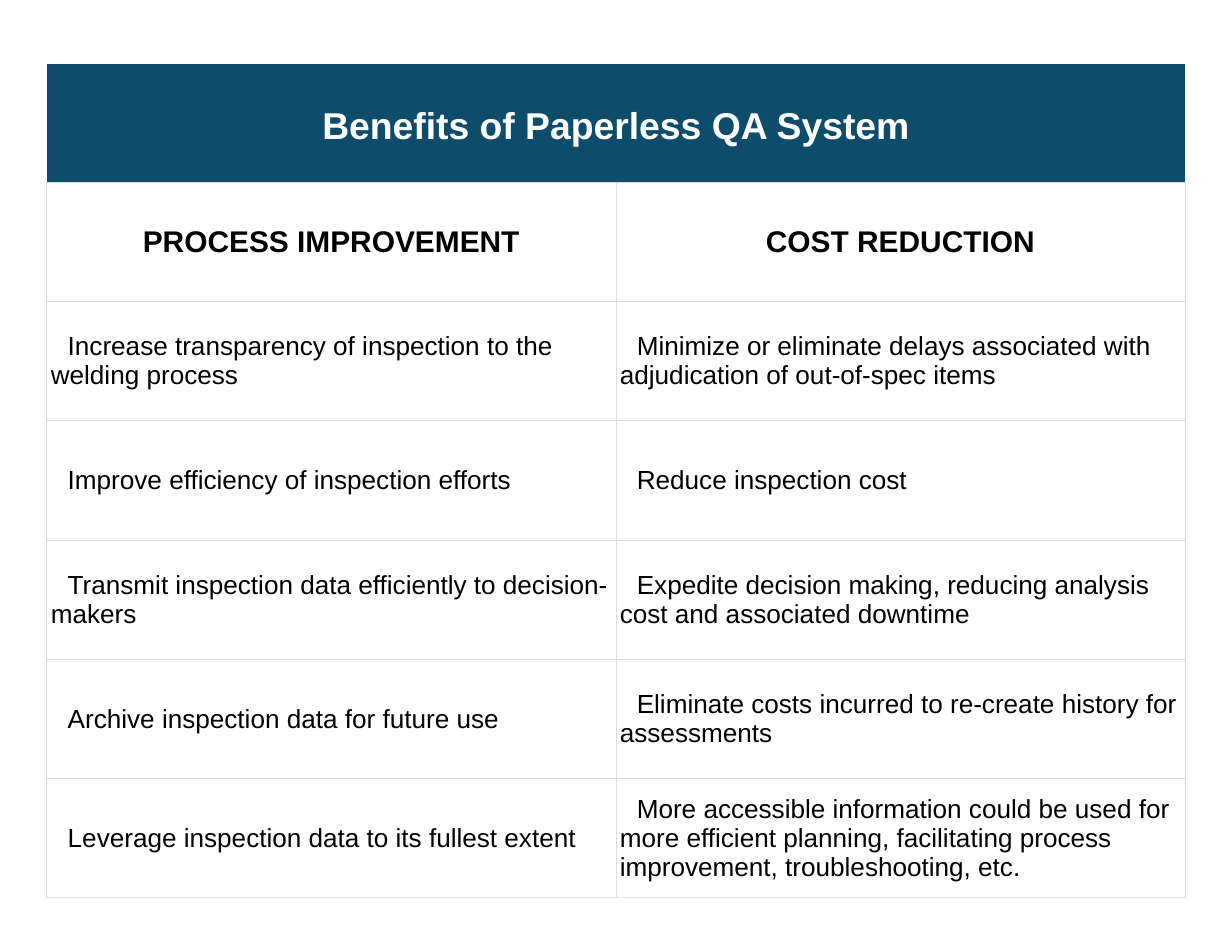
from dataclasses import dataclass

from lxml import etree
from pptx import Presentation
from pptx.dml.color import RGBColor
from pptx.enum import text
from pptx.oxml import ns
from pptx.util import Cm, Pt

TITLE = "Benefits of Paperless QA System"
HEADINGS = ("PROCESS IMPROVEMENT", "COST REDUCTION")
BENEFITS = [
    ("Increase transparency of inspection to the welding process",
     "Minimize or eliminate delays associated with adjudication of out-of-spec items"),
    ("Improve efficiency of inspection efforts",
     "Reduce inspection cost"),
    ("Transmit inspection data efficiently to decision-makers",
     "Expedite decision making, reducing analysis cost and associated downtime"),
    ("Archive inspection data for future use",
     "Eliminate costs incurred to re-create history for assessments"),
    ("Leverage inspection data to its fullest extent",
     "More accessible information could be used for more efficient planning, "
     "facilitating process improvement, troubleshooting, etc."),
]


@dataclass(frozen=True)
class Theme:
    font: str = "Arial"
    banner: str = "0D4C6B"
    paper: str = "FFFFFF"
    ink: str = "000000"
    grid: str = "DCDEE0"
    title_size: int = 40
    heading_size: int = 32
    body_size: int = 28


THEME = Theme()
SLIDE_W, SLIDE_H = Pt(1320), Pt(1000)
LEFT, TOP = Cm(1.77), Cm(2.38)
COL_W, ROW_H = Cm(21.51), Cm(4.51)
INSET = Cm(0.15)
INDENT = Cm(0.64)


def set_borders(cell, colors):
    tc_pr = cell._tc.get_or_add_tcPr()
    for i, (side, color) in enumerate(zip("LRTB", colors)):
        ln = etree.Element(ns.qn(f"a:ln{side}"), w=str(Pt(1)))
        fill = etree.SubElement(ln, ns.qn("a:solidFill"))
        etree.SubElement(fill, ns.qn("a:srgbClr"), val=color)
        tc_pr.insert(i, ln)


def style_cell(cell, fill, borders):
    cell.margin_left = cell.margin_right = INSET
    cell.margin_top = cell.margin_bottom = INSET
    cell.vertical_anchor = text.MSO_ANCHOR.MIDDLE
    cell.fill.solid()
    cell.fill.fore_color.rgb = RGBColor.from_string(fill)
    set_borders(cell, borders)


def write(cell, words, size, color, bold):
    p = cell.text_frame.paragraphs[0]
    r = p.add_run()
    r.text = words
    r.font.name = THEME.font
    r.font.size = Pt(size)
    r.font.bold = bold
    r.font.color.rgb = RGBColor.from_string(color)
    return p


def main():
    prs = Presentation()
    prs.slide_width, prs.slide_height = SLIDE_W, SLIDE_H
    s = prs.slides.add_slide(prs.slide_layouts[6])

    rows = [HEADINGS, *BENEFITS]
    n_rows, n_cols = len(rows) + 1, len(HEADINGS)
    table = s.shapes.add_table(n_rows, n_cols, LEFT, TOP,
                               COL_W * n_cols, ROW_H * n_rows).table
    table.first_row = table.horz_banding = False
    for col in table.columns:
        col.width = COL_W
    for row in table.rows:
        row.height = ROW_H

    for c in range(n_cols):
        style_cell(table.cell(0, c), THEME.banner, [THEME.paper] * 3 + [THEME.grid])
    banner = table.cell(0, 0)
    banner.merge(table.cell(0, n_cols - 1))
    p = write(banner, TITLE, THEME.title_size, THEME.paper, True)
    p.alignment = text.PP_ALIGN.CENTER
    p.line_spacing = 1.2

    for i, row in enumerate(rows):
        for c, words in enumerate(row):
            cell = table.cell(i + 1, c)
            style_cell(cell, THEME.paper, [THEME.grid] * 4)
            if row is HEADINGS:
                p = write(cell, words, THEME.heading_size, THEME.ink, True)
                p.alignment = text.PP_ALIGN.CENTER
            else:
                p = write(cell, words, THEME.body_size, THEME.ink, False)
                p.alignment = text.PP_ALIGN.LEFT
                p.level = 1
                p_pr = p._p.get_or_add_pPr()
                p_pr.set("marL", "0")
                p_pr.set("indent", str(INDENT))

    prs.save("out.pptx")


if __name__ == "__main__":
    main()
